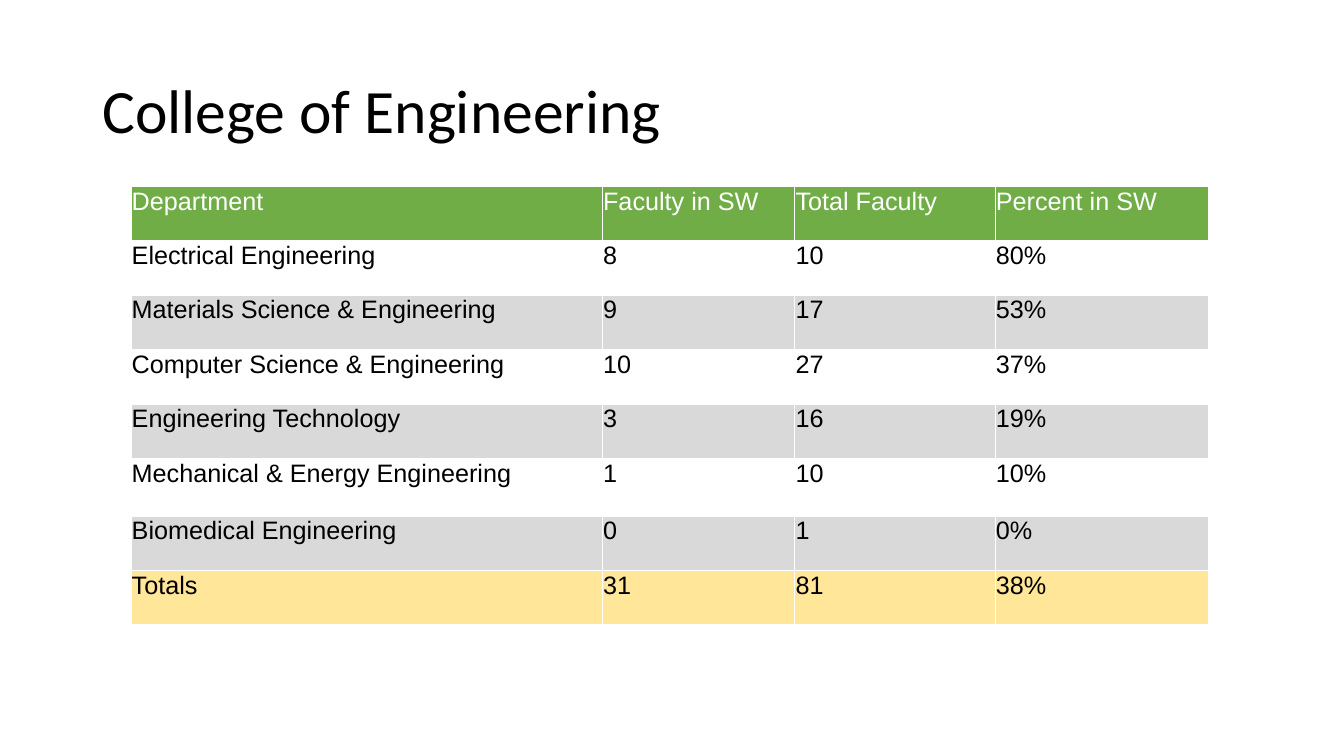
import pptx
import pptx.dml.color
import pptx.enum.text
import pptx.oxml
import pptx.oxml.ns
import pptx.util
from pptx.dml.color import RGBColor
from pptx.util import Cm

WHITE = RGBColor(0xFF, 0xFF, 0xFF)
BLACK = RGBColor(0x00, 0x00, 0x00)
GREEN = RGBColor(0x70, 0xAD, 0x47)
GREY = RGBColor(0xD9, 0xD9, 0xD9)
YELLOW = RGBColor(0xFF, 0xE6, 0x99)

HEADINGS = ("Department", "Faculty in SW", "Total Faculty", "Percent in SW")
DEPARTMENTS = (
    ("Electrical Engineering", "8", "10", "80%"),
    ("Materials Science & Engineering", "9", "17", "53%"),
    ("Computer Science & Engineering", "10", "27", "37%"),
    ("Engineering Technology", "3", "16", "19%"),
    ("Mechanical & Energy Engineering", "1", "10", "10%"),
    ("Biomedical Engineering", "0", "1", "0%"),
)
TOTALS = ("Totals", "31", "81", "38%")
COLUMN_WIDTHS = (11.88, 4.85, 5.05, 5.38)
ROW_HEIGHTS = (1.37,) * 5 + (1.46,) + (1.37,) * 2


def add_run(paragraph, text, font_name, size, color):
    run = paragraph.add_run()
    run.text = text
    run.font.name = font_name
    run.font.size = pptx.util.Pt(size)
    run.font.bold = False
    run.font.color.rgb = color


def add_title(slide, text):
    title = slide.shapes.add_textbox(Cm(2.33), Cm(1.01), Cm(29.21), Cm(3.68))
    frame = title.text_frame
    frame.word_wrap = True
    frame.vertical_anchor = pptx.enum.text.MSO_ANCHOR.MIDDLE
    heading = frame.paragraphs[0]
    heading.line_spacing = 0.9
    add_run(heading, text, "Calibri", 44, BLACK)


def add_borders(cell, color):
    properties = cell._tc.get_or_add_tcPr()
    for side in ("lnL", "lnR", "lnT", "lnB"):
        properties.append(pptx.oxml.parse_xml(
            f'<a:{side} {pptx.oxml.ns.nsdecls("a")} w="12700"><a:solidFill>'
            f'<a:srgbClr val="{color}"/></a:solidFill></a:{side}>'
        ))


def fill_cell(cell, text, text_color, background):
    cell.margin_left = cell.margin_right = cell.margin_top = Cm(0.02)
    cell.margin_bottom = Cm(0)
    add_borders(cell, WHITE)
    if background is None:
        cell.fill.background()
    else:
        cell.fill.solid()
        cell.fill.fore_color.rgb = background
    add_run(cell.text_frame.paragraphs[0], text, "Arial", 18, text_color)


def add_faculty_table(slide):
    records = (HEADINGS, *DEPARTMENTS, TOTALS)
    faculty = slide.shapes.add_table(
        len(records), len(HEADINGS), Cm(3.3), Cm(4.7),
        Cm(sum(COLUMN_WIDTHS)), Cm(sum(ROW_HEIGHTS)),
    ).table
    faculty.first_row = False
    faculty.horz_banding = False
    for column, width in zip(faculty.columns, COLUMN_WIDTHS):
        column.width = Cm(width)
    for row, height in zip(faculty.rows, ROW_HEIGHTS):
        row.height = Cm(height)

    bands = [None if index % 2 == 0 else GREY for index in range(len(DEPARTMENTS))]
    backgrounds = (GREEN, *bands, YELLOW)
    for row, record, background in zip(faculty.rows, records, backgrounds):
        text_color = WHITE if record is HEADINGS else BLACK
        for cell, text in zip(row.cells, record):
            fill_cell(cell, text, text_color, background)


def main():
    presentation = pptx.Presentation()
    presentation.slide_width = Cm(33.87)
    presentation.slide_height = Cm(19.05)
    slide = presentation.slides.add_slide(presentation.slide_layouts[6])
    add_title(slide, "College of Engineering")
    add_faculty_table(slide)
    presentation.save("out.pptx")


if __name__ == "__main__":
    main()
